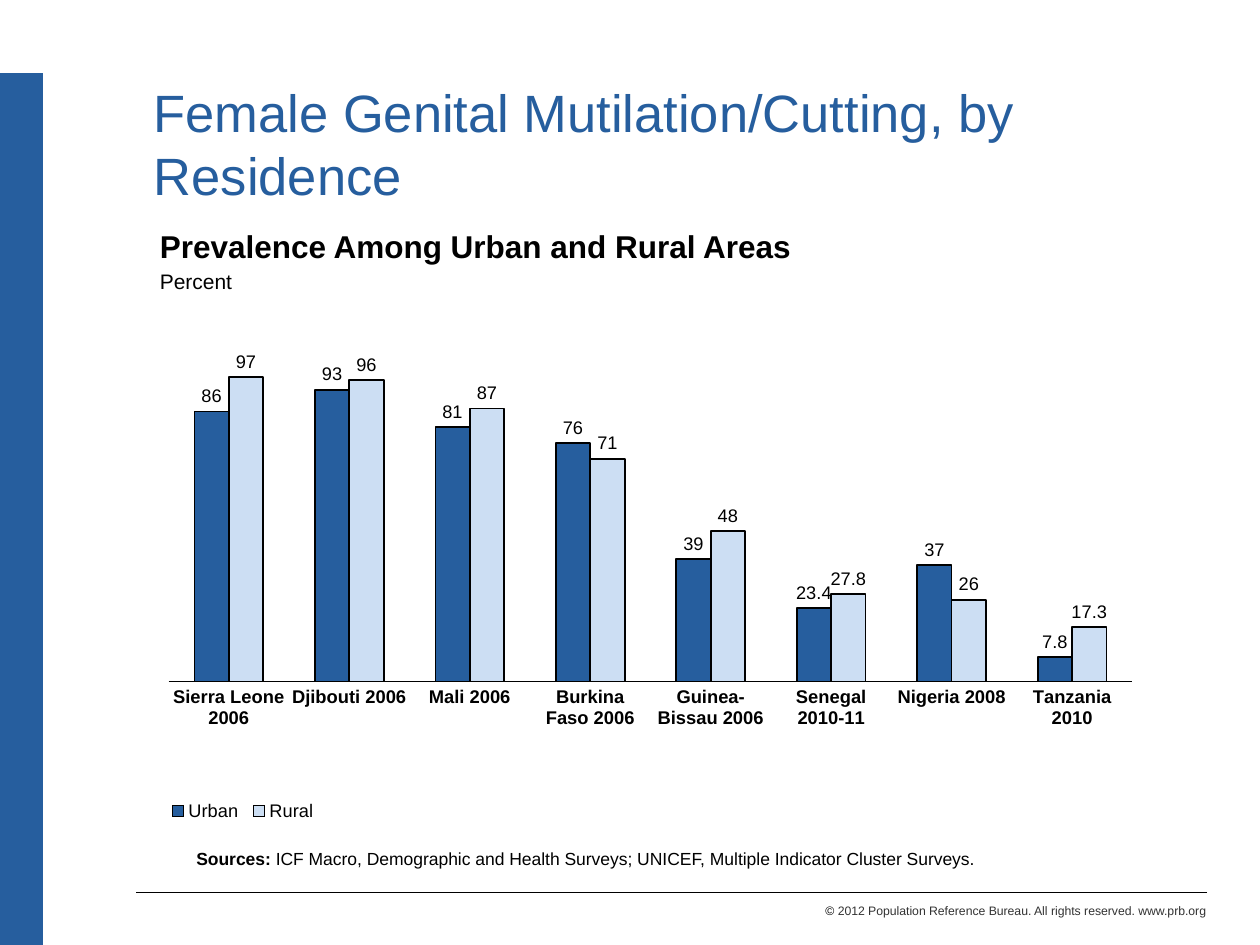
from lxml.etree import SubElement
from pptx import Presentation
from pptx.chart.data import CategoryChartData
from pptx.dml.color import RGBColor
from pptx.enum.chart import XL_CHART_TYPE, XL_LABEL_POSITION, XL_LEGEND_POSITION, XL_TICK_MARK
from pptx.enum.shapes import MSO_CONNECTOR
from pptx.enum.text import MSO_ANCHOR, PP_ALIGN
from pptx.oxml import parse_xml
from pptx.oxml.ns import nsdecls, qn
from pptx.util import Inches, Pt

BLUE, PALE, BLACK, GREY = "265E9E", "CCDEF3", "000000", "333333"


def color(code):
    return RGBColor.from_string(code)


def style(font, size, code=BLACK, bold=False):
    font.name = "Arial"
    font.size = Pt(size)
    font.bold = bold
    font.color.rgb = color(code)


def stroke(line, width, code=BLACK):
    line.color.rgb = color(code)
    line.width = Pt(width)


def place(part, x, y, w, h, inner=False):
    """Set a manual layout, in fractions of the chart, on a chart part."""
    target = '<c:layoutTarget val="inner"/>' if inner else ""
    vals = "".join(f'<c:{k} val="{v}"/>' for k, v in zip("xywh", (x, y, w, h)))
    layout = parse_xml(
        f'<c:layout {nsdecls("c")}><c:manualLayout>{target}'
        f'<c:xMode val="edge"/><c:yMode val="edge"/>{vals}'
        "</c:manualLayout></c:layout>")
    old = part.find(qn("c:layout"))
    if old is not None:
        part.remove(old)
    pos = part.find(qn("c:legendPos"))
    part.insert(0 if pos is None else part.index(pos) + 1, layout)


class Page:
    def __init__(self, deck):
        self.slide = deck.slides.add_slide(deck.slide_layouts[5])
        self.shapes = self.slide.shapes

    def fill(self, shape, paras, align=PP_ALIGN.LEFT, gap=0):
        """Write paragraphs of (text, size, colour, bold) runs."""
        frame = shape.text_frame
        frame.word_wrap = True
        for i, runs in enumerate(paras):
            para = frame.add_paragraph() if i else frame.paragraphs[0]
            para.alignment = align
            if i:
                para.space_before = Pt(gap)
            for text, *look in runs:
                run = para.add_run()
                run.text = text
                style(run.font, *look)

    def title(self, box, text):
        shape = self.shapes.title
        shape.left, shape.top, shape.width, shape.height = map(Inches, box)
        shape.text_frame.vertical_anchor = MSO_ANCHOR.MIDDLE
        shape.text_frame.margin_top = Inches(0.08)
        self.fill(shape, [[(text, 30, BLUE)]])

    def text(self, box, paras, **opts):
        self.fill(self.shapes.add_textbox(*map(Inches, box)), paras, **opts)

    def line(self, ends, width, code=BLACK):
        rule = self.shapes.add_connector(MSO_CONNECTOR.STRAIGHT, *map(Inches, ends))
        stroke(rule.line, width, code)
        SubElement(rule._element.spPr, qn("a:effectLst"))

    def chart(self, box, cats, series):
        data = CategoryChartData()
        data.categories = cats
        for name, vals, _ in series:
            data.add_series(name, vals)
        chart = self.shapes.add_chart(
            XL_CHART_TYPE.COLUMN_CLUSTERED, *map(Inches, box), data).chart
        chart.has_title = False
        style(chart.font, 13.3, bold=True)

        plot = chart.plots[0]
        plot.gap_width = 150
        plot.overlap = 0
        plot.vary_by_categories = False
        for bars, (_, _, code) in zip(plot.series, series):
            bars.invert_if_negative = False
            bars.format.fill.solid()
            bars.format.fill.fore_color.rgb = color(code)
            stroke(bars.format.line, 0.95)
            labels = bars.data_labels
            labels.show_value = True
            labels.position = XL_LABEL_POSITION.OUTSIDE_END
            style(labels.font, 10.4)

        axis = chart.category_axis
        axis.major_tick_mark = axis.minor_tick_mark = XL_TICK_MARK.NONE
        style(axis.tick_labels.font, 10.5, bold=True)
        body = axis._element.find(qn("c:txPr")).find(qn("a:bodyPr"))
        body.set("rot", "0")
        body.set("vert", "horz")
        stroke(axis.format.line, 0.25)
        scale = chart.value_axis
        scale.minimum_scale, scale.maximum_scale = 0, 120
        scale.has_major_gridlines = False
        scale.visible = False

        chart.has_legend = True
        key = chart.legend
        key.position = XL_LEGEND_POSITION.BOTTOM
        key.include_in_layout = False
        style(key.font, 10.4)
        place(key._element, 0.01, 0.93, 0.16, 0.07)
        place(chart._chartSpace.chart.plotArea, 0.015, 0.026, 0.972, 0.698, True)


def main():
    deck = Presentation()
    deck.slide_width, deck.slide_height = Inches(10), Inches(7.5)
    page = Page(deck)
    page.line((0.17, 0.58, 0.17, 7.5), 25, BLUE)
    page.text((4.25, 7.12, 5.42, 0.22), [[
        ("© ", 7),
        ("2012 Population Reference Bureau. All rights reserved. www.prb.org", 7, GREY),
    ]], align=PP_ALIGN.RIGHT)
    page.line((9.58, 7.08, 1.08, 7.08), 0.5)
    page.title((1.12, 0.58, 8.46, 1.08), "Female Genital Mutilation/Cutting, by Residence")
    page.chart(
        (1.22, 2.31, 7.87, 4.28),
        ["Sierra Leone 2006", "Djibouti 2006", "Mali 2006", "Burkina Faso 2006",
         "Guinea-Bissau 2006", "Senegal 2010-11", "Nigeria 2008", "Tanzania 2010"],
        [("Urban", (86, 93, 81, 76, 39, 23.4, 37, 7.8), BLUE),
         ("Rural", (97, 96, 87, 71, 48, 27.8, 26, 17.3), PALE)])
    page.text((1.17, 1.75, 8.5, 0.64), [
        [("Prevalence Among Urban and Rural Areas", 18, BLACK, True)],
        [("Percent", 12)],
    ], gap=2.4)
    page.text((1.46, 6.68, 7.92, 0.27), [[
        ("Sources: ", 10, BLACK, True),
        ("ICF Macro, Demographic and Health Surveys; UNICEF, "
         "Multiple Indicator Cluster Surveys.", 10),
    ]])
    deck.save("out.pptx")


if __name__ == "__main__":
    main()
